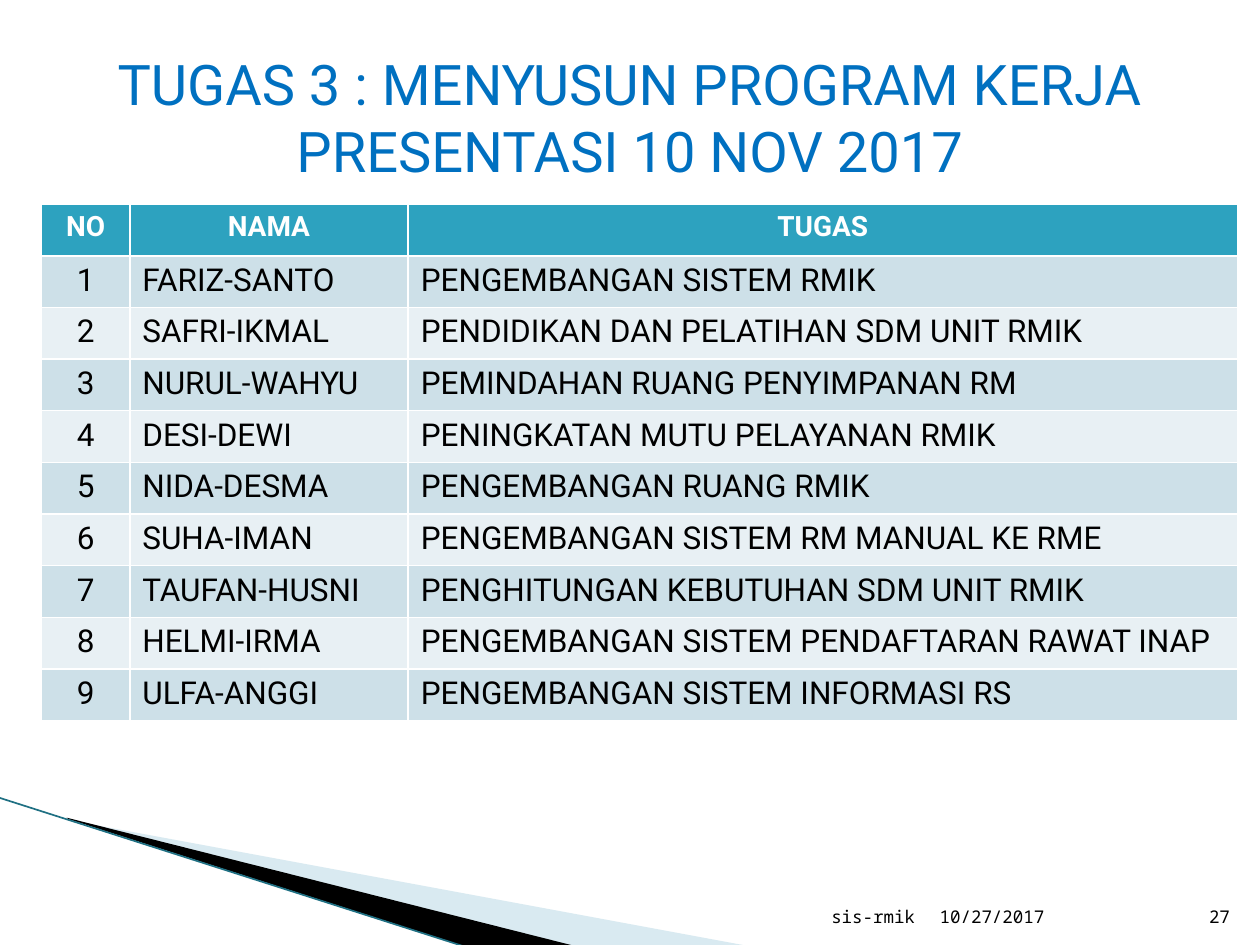
from pptx import Presentation
from pptx.dml.color import RGBColor
from pptx.enum import shapes, text
from pptx.oxml import parse_xml
from pptx.oxml.ns import nsdecls, qn
from pptx.util import Inches, Pt

# Content
TITLE = "TUGAS 3 : MENYUSUN PROGRAM KERJA\vPRESENTASI 10 NOV 2017"
HEAD = ("NO", "NAMA", "TUGAS")
TASKS = [
    ("FARIZ-SANTO", "PENGEMBANGAN SISTEM RMIK"),
    ("SAFRI-IKMAL", "PENDIDIKAN DAN PELATIHAN SDM UNIT RMIK"),
    ("NURUL-WAHYU", "PEMINDAHAN RUANG PENYIMPANAN RM"),
    ("DESI-DEWI", "PENINGKATAN MUTU PELAYANAN RMIK"),
    ("NIDA-DESMA", "PENGEMBANGAN RUANG RMIK"),
    ("SUHA-IMAN", "PENGEMBANGAN SISTEM RM MANUAL KE RME"),
    ("TAUFAN-HUSNI", "PENGHITUNGAN KEBUTUHAN SDM UNIT RMIK"),
    ("HELMI-IRMA", "PENGEMBANGAN SISTEM PENDAFTARAN RAWAT INAP"),
    ("ULFA-ANGGI", "PENGEMBANGAN SISTEM INFORMASI RS"),
]
LEFT, CENTER, RIGHT = (text.PP_ALIGN.LEFT, text.PP_ALIGN.CENTER,
                       text.PP_ALIGN.RIGHT)
FOOT = [  # text, left, width, alignment
    ("10/27/2017", 7.36, 2.1, LEFT),
    ("sis-rmik", 4.79, 2.57, RIGHT),
    ("27", 9.46, 0.4, RIGHT),
]
WEDGES = [  # points, colour, opacity in percent
    ([(0.55, 6.51), (5.95, 7.51), (4.56, 7.51), (0.55, 6.5)], "A0CBDC", 40),
    ([(0.53, 6.49), (4.57, 7.51), (3.72, 7.52), (0.54, 6.5)], "000000", 100),
]
COLS = (0.7, 2.21, 6.58)
ROW = 0.41


def paint(fmt, color):
    fmt.solid()
    fmt.fore_color.rgb = RGBColor.from_string(color)


def style(frame, size, color, face="Roboto", align=LEFT, bold=False):
    for par in frame.paragraphs:
        par.alignment = align
        for run in par.runs:
            run.font.size, run.font.name = Pt(size), face
            run.font.bold = bold
            run.font.color.rgb = RGBColor.from_string(color)


deck = Presentation()
deck.slide_width, deck.slide_height = Inches(10), Inches(7.5)
slide = deck.slides.add_slide(deck.slide_layouts[5])

# Corner wedges and edge line
for points, color, alpha in WEDGES:
    first, *rest = [(Inches(x), Inches(y)) for x, y in points]
    pen = slide.shapes.build_freeform(*first)
    pen.add_line_segments(rest)
    wedge = pen.convert_to_shape()
    wedge.shadow.inherit = False
    wedge.line.fill.background()
    paint(wedge.fill, color)
    if alpha < 100:
        tint = wedge._element.spPr.find(qn("a:solidFill"))[0]
        tint.append(parse_xml(
            f'<a:alpha {nsdecls("a")} val="{alpha * 1000}"/>'))

edge = slide.shapes.add_connector(
    shapes.MSO_CONNECTOR.STRAIGHT,
    Inches(-0.01), Inches(6.33), Inches(3.71), Inches(7.52))
edge.line.width = Pt(0.95)
paint(edge.line.fill, "1F7083")
edge._element.spPr.append(parse_xml(f'<a:effectLst {nsdecls("a")}/>'))

# Title
title = slide.shapes.title
title.left, title.top = Inches(0.5), Inches(0.3)
title.width, title.height = Inches(9), Inches(1.25)
title.text_frame.text = TITLE
title.text_frame.vertical_anchor = text.MSO_ANCHOR.MIDDLE
style(title.text_frame, 32, "0070C0", align=CENTER)

# Footer
for words, left, width, align in FOOT:
    box = slide.shapes.add_textbox(
        Inches(left), Inches(7.01), Inches(width), Inches(0.4))
    frame = box.text_frame
    frame.word_wrap = True
    frame.vertical_anchor = text.MSO_ANCHOR.BOTTOM
    frame.text = words
    style(frame, 10, "000000", "Noto Sans Mono", align)

# Task table
rows = [HEAD] + [(str(n), *task) for n, task in enumerate(TASKS, 1)]
table = slide.shapes.add_table(
    len(rows), len(COLS), Inches(0.33), Inches(1.62),
    Inches(sum(COLS)), Inches(ROW * len(rows))).table
for col, width in zip(table.columns, COLS):
    col.width = Inches(width)
for r, row in enumerate(rows):
    table.rows[r].height = Inches(ROW)
    for c, words in enumerate(row):
        cell = table.cell(r, c)
        cell.text_frame.text = words
        if r == 0:
            paint(cell.fill, "2DA2BF")
            style(cell.text_frame, 16, "FFFFFF", align=CENTER, bold=True)
        else:
            paint(cell.fill, "CDE0E8" if r % 2 else "E8F0F4")
            style(cell.text_frame, 18, "000000",
                  align=LEFT if c else CENTER)

deck.save("out.pptx")
